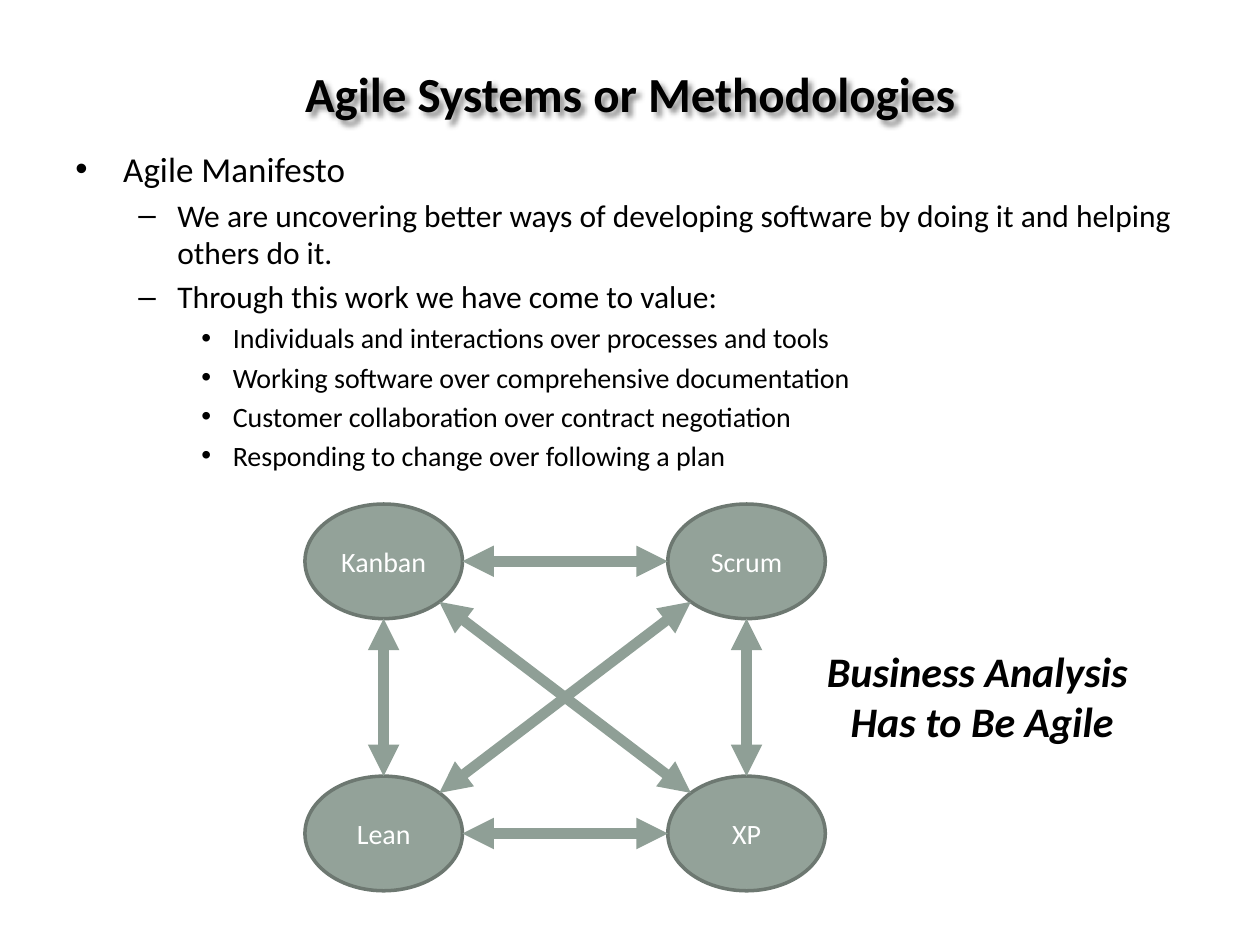
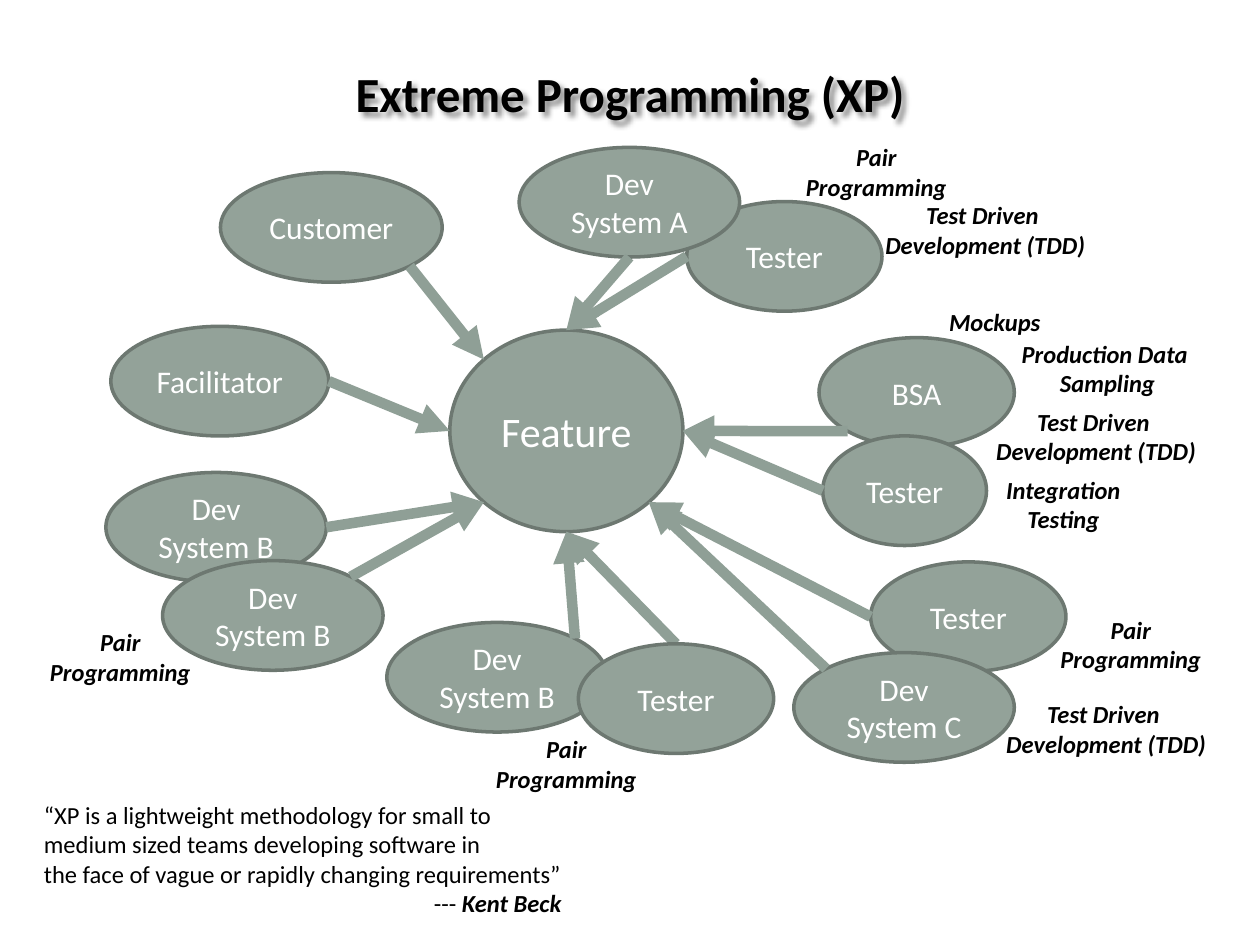
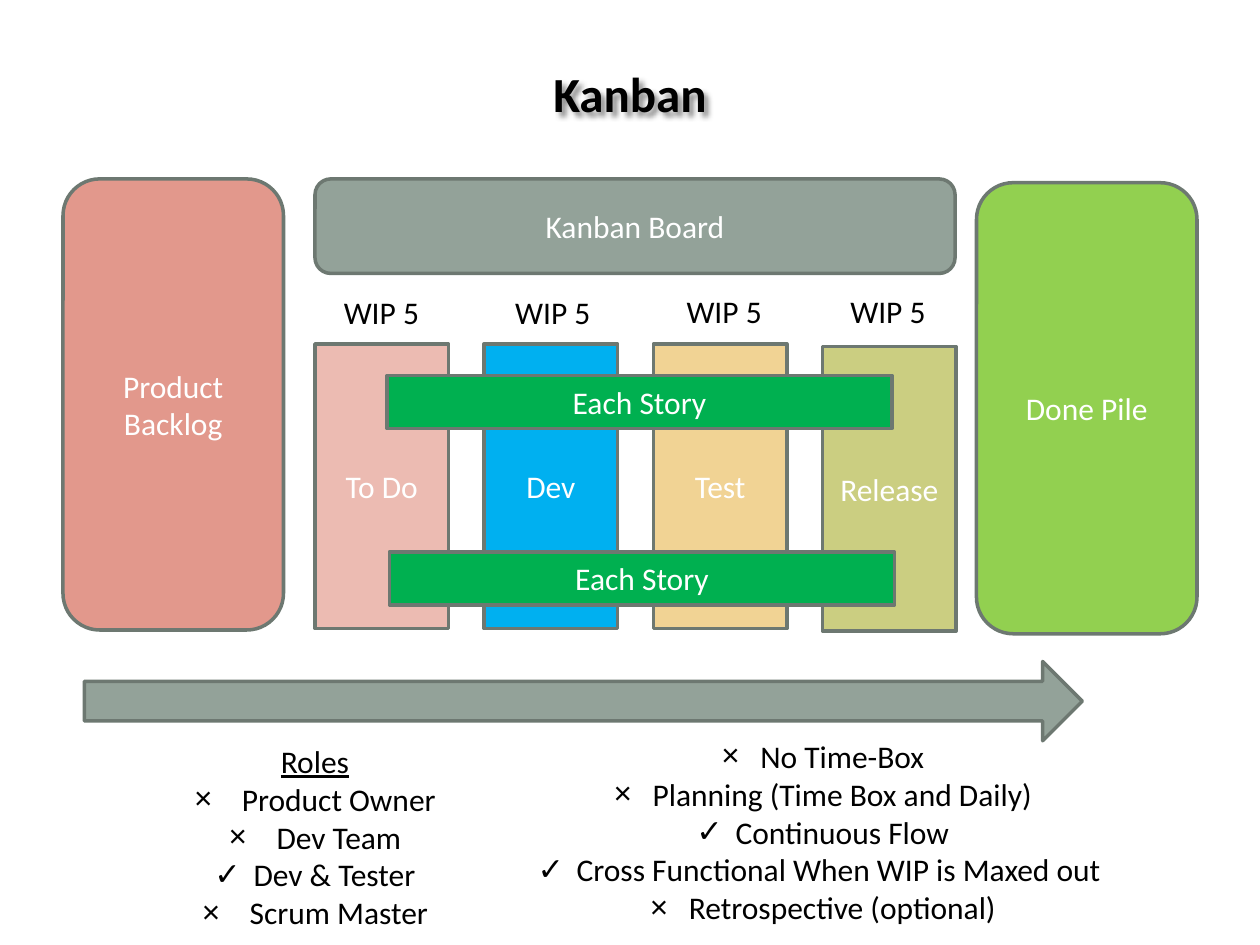
from copy import deepcopy
from math import cos, radians, sin

from lxml.etree import SubElement
from pptx import Presentation
from pptx.dml.color import RGBColor
from pptx.enum.shapes import MSO_CONNECTOR, MSO_SHAPE
from pptx.enum.text import MSO_ANCHOR, MSO_AUTO_SIZE, PP_ALIGN
from pptx.oxml.ns import qn
from pptx.util import Inches, Pt

# Shared colours and text formats
BLACK = RGBColor(0x00, 0x00, 0x00)
WHITE = RGBColor(0xFF, 0xFF, 0xFF)
SAGE = RGBColor(0x93, 0xA2, 0x99)
EDGE = RGBColor(0x6D, 0x78, 0x71)
ARROW = RGBColor(0x8F, 0x9F, 0x96)
SALMON = RGBColor(0xE2, 0x98, 0x8C)
PINK = RGBColor(0xEC, 0xBB, 0xB2)
BLUE = RGBColor(0x00, 0xB0, 0xF0)
SAND = RGBColor(0xF1, 0xD3, 0x94)
OLIVE = RGBColor(0xCB, 0xCE, 0x81)
LIME = RGBColor(0x92, 0xD0, 0x50)
GREEN = RGBColor(0x00, 0xB0, 0x50)

HEAD = {"size": Pt(28), "bold": True}
CLAIM = {"size": Pt(24), "bold": True, "italic": True}
NOTE = {"size": Pt(14), "bold": True, "italic": True}
QUOTE = {"size": Pt(14)}
PLAIN = {"size": Pt(18)}

# Slide 1: bullets as (level, text), methods as name: box
POINTS = [
    (0, "Agile Manifesto"),
    (1, "We are uncovering better ways of developing software by doing it and helping others do it."),
    (1, "Through this work we have come to value:"),
    (2, "Individuals and interactions over processes and tools"),
    (2, "Working software over comprehensive documentation"),
    (2, "Customer collaboration over contract negotiation"),
    (2, "Responding to change over following a plan"),
]
# Mark, left indent, hanging indent, text size
LEVELS = [("•", 0.38, 0.38, 20), ("–", 0.81, 0.31, 18), ("•", 1.25, 0.25, 16)]
METHODS = [["Kanban", "Scrum"], ["Lean", "XP"]]
PAIRS = [
    ("Kanban", "SE", "XP", "NW"), ("Lean", "NE", "Scrum", "SW"),
    ("Kanban", "S", "Lean", "N"), ("XP", "W", "Lean", "E"),
    ("Scrum", "S", "XP", "N"), ("Scrum", "W", "Kanban", "E"),
]

# Slide 2: key: (text, left, top, width)
BACK = {
    "client": ("Customer", 1.75, 1.37, 1.76),
    "guide": ("Facilitator", 0.88, 2.59, 1.73),
    "dev b1": ("Dev System B", 0.84, 3.75, 1.75),
    "test a": ("Tester", 5.45, 1.6, 1.55),
    "test c": ("Tester", 6.91, 4.46, 1.55),
    "bsa": ("BSA", 6.5, 2.68, 1.55),
    "dev a": ("Dev System A", 4.12, 1.17, 1.75),
    "dev b3": ("Dev System B", 3.07, 4.94, 1.75),
    "dev c": ("Dev System C", 6.3, 5.18, 1.75),
}
FRONT = {
    "test b": ("Tester", 4.59, 5.11, 1.55),
    "dev b2": ("Dev System B", 1.29, 4.45, 1.75),
    "test d": ("Tester", 6.53, 3.46, 1.3),
}
TALL = 0.87
CORE = (3.57, 2.62, 1.85, 1.6)
# Key, side it leaves, side of the feature it meets
LOWER = [
    ("client", "SE", "NW"), ("guide", "E", "W"), ("dev b1", "E", "SW"),
    ("dev b3", "NE", "S"), ("test b", "N", "S"), ("dev c", "NW", "SE"),
    ("test a", "W", "N"), ("test c", "W", "SE"), ("bsa", "SW", "E"),
    ("dev a", "S", "N"),
]
UPPER = [("dev b2", "NE", "SW"), ("test d", "W", "E")]
PAIR = ["Pair", "Programming"]
TDD = ["Test Driven \vDevelopment (TDD)"]
# Lines, width, places
NOTES = [
    (PAIR, 1.33, [(0.29, 4.93), (3.83, 5.78), (8.31, 4.83), (6.29, 1.08)]),
    (TDD, 1.8, [(6.92, 1.54), (7.88, 5.5), (7.8, 3.18)]),
    (["Integration", "Testing"], 1.12, [(7.88, 3.72)]),
    (["Production Data \vSampling"], 1.58, [(8, 2.64)]),
    (["Mockups"], 0.93, [(7.43, 2.39)]),
]
SAYING = [
    "“XP is a lightweight methodology for small to",
    "medium sized teams developing software in",
    "the face of vague or rapidly changing requirements”",
    "--- ",
]

# Slide 3
PANELS = [
    ("Product Backlog", (0.5, 1.42, 1.75, 3.58), SALMON),
    ("Kanban Board", (2.5, 1.42, 5.08, 0.75), SAGE),
    ("Done Pile", (7.75, 1.45, 1.75, 3.58), LIME),
]
# Name, fill, top, place of the limit above
LANES = [
    ("To Do", PINK, 2.73, (2.63, 2.28)),
    ("Dev", BLUE, 2.73, (3.99, 2.28)),
    ("Test", SAND, 2.73, (5.35, 2.27)),
    ("Release", OLIVE, 2.75, (6.65, 2.27)),
]
STORIES = [(3.07, 2.98), (3.09, 4.38)]
# Mark, left indent, text
RULES = [
    ("×", 0.31, "No Time-Box"),
    ("×", 0.31, "Planning (Time Box and Daily)"),
    ("✓", 0.31, "Continuous Flow"),
    ("✓", 0.31, "Cross Functional When WIP is Maxed out "),
    ("×", 0.31, "Retrospective (optional)"),
]
ROLES = [
    ("", 0, "Roles"),
    ("×", 0.38, "Product Owner"),
    ("×", 0.38, "Dev Team"),
    ("✓", 0.31, "Dev & Tester"),
    ("×", 0.38, "Scrum Master"),
]


# Text
def style(run, form, color):
    for key, val in form.items():
        setattr(run.font, key, val)
    run.font.name = "Calibri"
    run.font.color.rgb = color


def write(frame, lines, form, color=BLACK, align=PP_ALIGN.CENTER):
    for num, line in enumerate(lines):
        para = frame.add_paragraph() if num else frame.paragraphs[0]
        para.text = line
        para.alignment = align
        for run in para.runs:
            style(run, form, color)
        for brk in para._p.findall(qn("a:br")):
            brk.append(deepcopy(para.runs[0]._r.rPr))
    return frame.paragraphs


def bullet(para, mark, left, hang):
    props = para._p.get_or_add_pPr()
    props.set("marL", str(Inches(left)))
    props.set("indent", str(-Inches(hang)))
    SubElement(props, qn("a:buFont"), typeface="Arial")
    SubElement(props, qn("a:buChar"), char=mark)


def label(slide, box, lines, form, align=PP_ALIGN.CENTER, wrap=False):
    text = slide.shapes.add_textbox(*map(Inches, box))
    frame = text.text_frame
    frame.word_wrap = wrap
    frame.auto_size = MSO_AUTO_SIZE.NONE if wrap else MSO_AUTO_SIZE.SHAPE_TO_FIT_TEXT
    write(frame, lines, form, align=align)
    return text


def listing(slide, box, items):
    text = label(slide, box, [item[2] for item in items], PLAIN)
    for para, (mark, left, _) in zip(text.text_frame.paragraphs, items):
        if mark:
            bullet(para, mark, left, left)
    return text


# Shapes and arrows
def block(slide, kind, box, fill, words="", size=18):
    shape = slide.shapes.add_shape(kind, *map(Inches, box))
    shape.shadow.inherit = False
    shape.fill.solid()
    shape.fill.fore_color.rgb = fill
    shape.line.color.rgb = EDGE
    shape.line.width = Pt(2)
    shape.text_frame.vertical_anchor = MSO_ANCHOR.MIDDLE
    if words:
        write(shape.text_frame, [words], {"size": Pt(size)}, WHITE)


def rim(box, side):
    """Point on the ellipse in box at a compass side."""
    left, top, wide, high = box
    turn = radians(45 * ["E", "SE", "S", "SW", "W", "NW", "N", "NE"].index(side))
    return left + wide / 2 * (1 + cos(turn)), top + high / 2 * (1 + sin(turn))


def arrow(slide, start, end, both=False):
    line = slide.shapes.add_connector(MSO_CONNECTOR.STRAIGHT, *map(Inches, start + end))
    line.line.color.rgb = ARROW
    line.line.width = Pt(6)
    props = line._element.spPr
    tips = ["headEnd", "tailEnd"] if both else ["tailEnd"]
    for tip in tips:
        SubElement(props.find(qn("a:ln")), qn("a:" + tip), type="triangle")
    SubElement(props, qn("a:effectLst"))


def start(deck, words):
    slide = deck.slides.add_slide(deck.slide_layouts[6])
    title = label(slide, (0.5, 0.3, 9, 0.87), [words], HEAD, wrap=True)
    title.text_frame.vertical_anchor = MSO_ANCHOR.MIDDLE
    glow = SubElement(title._element.spPr, qn("a:effectLst"))
    cast = SubElement(glow, qn("a:outerShdw"), blurRad=str(Pt(3)), dist=str(Pt(3)),
                      dir="2700000", algn="tl")
    tone = SubElement(cast, qn("a:srgbClr"), val="000000")
    SubElement(tone, qn("a:alpha"), val="43000")
    return slide


# Slides
def agile(deck):
    slide = start(deck, "Agile Systems or Methodologies")
    body = label(slide, (0.5, 1.12, 9, 5.37), [text for _, text in POINTS], PLAIN,
                 PP_ALIGN.LEFT, True)
    for num, (para, (level, _)) in enumerate(zip(body.text_frame.paragraphs, POINTS)):
        mark, left, hang, size = LEVELS[level]
        para.level = level
        para.space_before = Pt(size * 0.2 if num else 0)
        bullet(para, mark, left, hang)
        para.runs[0].font.size = Pt(size)

    boxes = {}
    for row, names in enumerate(METHODS):
        for col, name in enumerate(names):
            boxes[name] = (2.42 + 2.88 * col, 4 + 2.16 * row, 1.25, 0.91)
            block(slide, MSO_SHAPE.OVAL, boxes[name], SAGE, name, 16)
    for one, leave, two, meet in PAIRS:
        arrow(slide, rim(boxes[one], leave), rim(boxes[two], meet), True)
    label(slide, (6.45, 5.07, 2.69, 0.91), ["Business Analysis \vHas to Be Agile"], CLAIM)


def extreme(deck):
    slide = start(deck, "Extreme Programming (XP)")
    boxes = {key: (left, top, wide, TALL)
             for key, (_, left, top, wide) in (BACK | FRONT).items()}

    def people(group):
        for key, item in group.items():
            block(slide, MSO_SHAPE.OVAL, boxes[key], SAGE, item[0])

    def links(group):
        for key, leave, meet in group:
            arrow(slide, rim(boxes[key], leave), rim(CORE, meet))

    people(BACK)
    block(slide, MSO_SHAPE.OVAL, CORE, SAGE, "Feature", 24)
    links(LOWER)
    people(FRONT)
    links(UPPER)

    for lines, wide, spots in NOTES:
        high = 0.34 if lines == ["Mockups"] else 0.57
        for left, top in spots:
            label(slide, (left, top, wide, high), lines, NOTE)
    quote = label(slide, (0.25, 6.3, 4.47, 1.04), SAYING, QUOTE, PP_ALIGN.LEFT)
    last = quote.text_frame.paragraphs[-1]
    last.alignment = PP_ALIGN.RIGHT
    name = last.add_run()
    name.text = "Kent Beck"
    style(name, NOTE, BLACK)


def kanban(deck):
    slide = start(deck, "Kanban")
    for words, box, fill in PANELS:
        block(slide, MSO_SHAPE.ROUNDED_RECTANGLE, box, fill, words)
    for num, (name, fill, top, spot) in enumerate(LANES):
        block(slide, MSO_SHAPE.RECTANGLE, (2.5 + 1.343 * num, top, 1.06, 2.26), fill, name)
        label(slide, (*spot, 0.81, 0.4), ["WIP 5"], PLAIN, PP_ALIGN.LEFT)
    listing(slide, (4.14, 5.8, 4.78, 1.62), RULES)
    block(slide, MSO_SHAPE.RIGHT_ARROW, (0.67, 5.25, 7.92, 0.63), SAGE)
    for spot in STORIES:
        block(slide, MSO_SHAPE.RECTANGLE, (*spot, 4.01, 0.42), GREEN, "Each Story")
    roles = listing(slide, (1.43, 5.84, 2.14, 1.62), ROLES)
    roles.text_frame.paragraphs[0].runs[0].font.underline = True


def main():
    deck = Presentation()
    deck.slide_width, deck.slide_height = Inches(10), Inches(7.5)
    for build in (agile, extreme, kanban):
        build(deck)
    deck.save("out.pptx")


if __name__ == "__main__":
    main()
